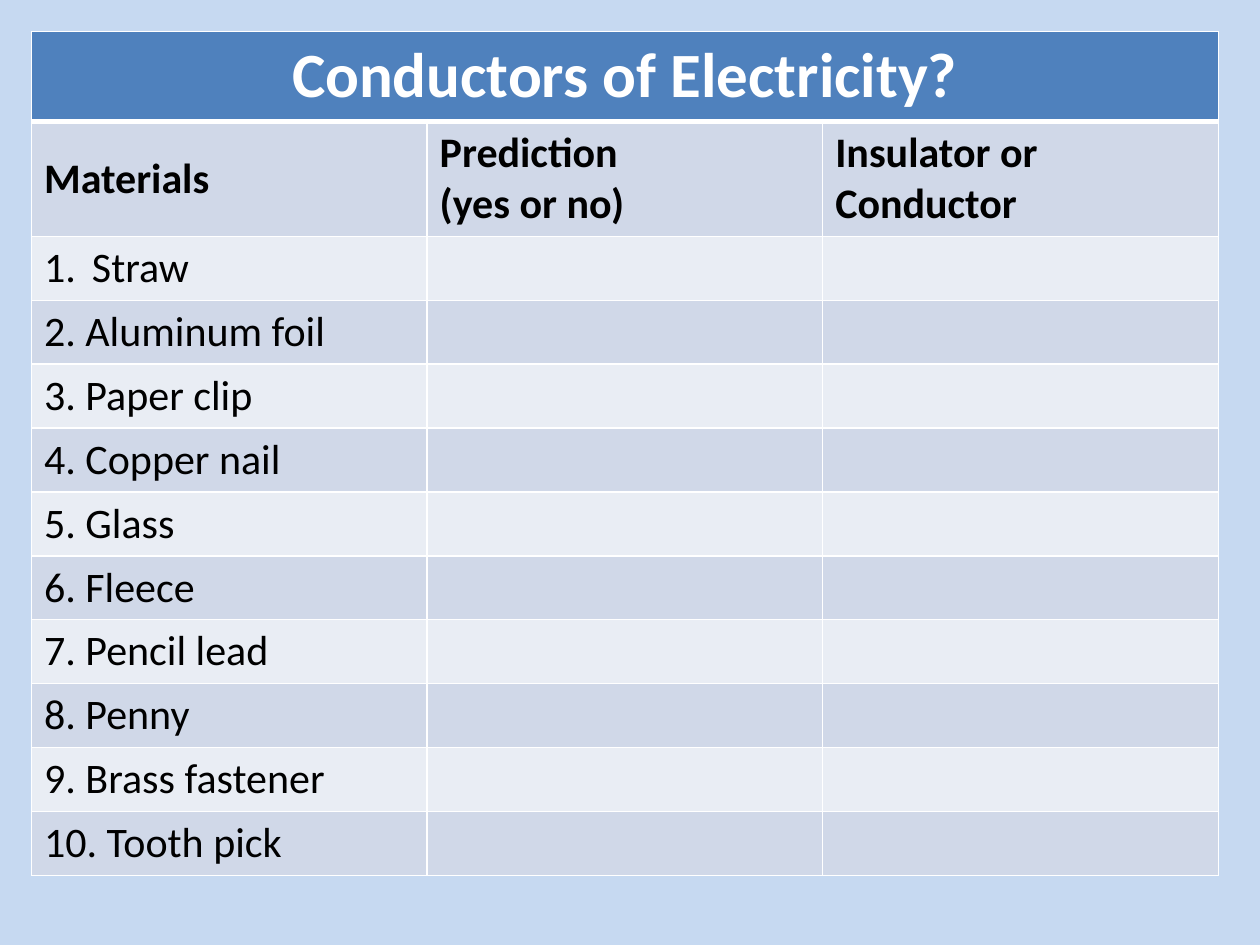
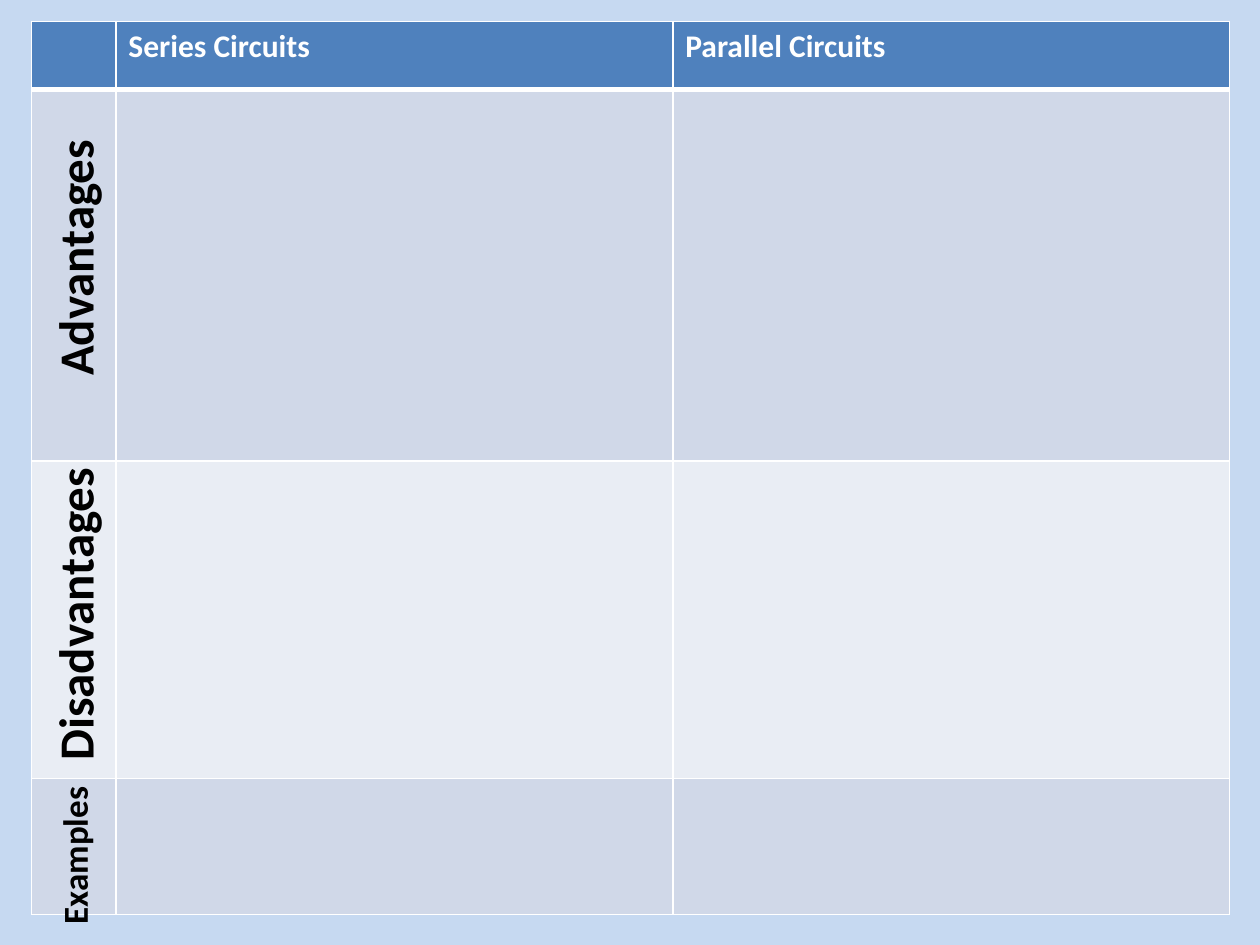
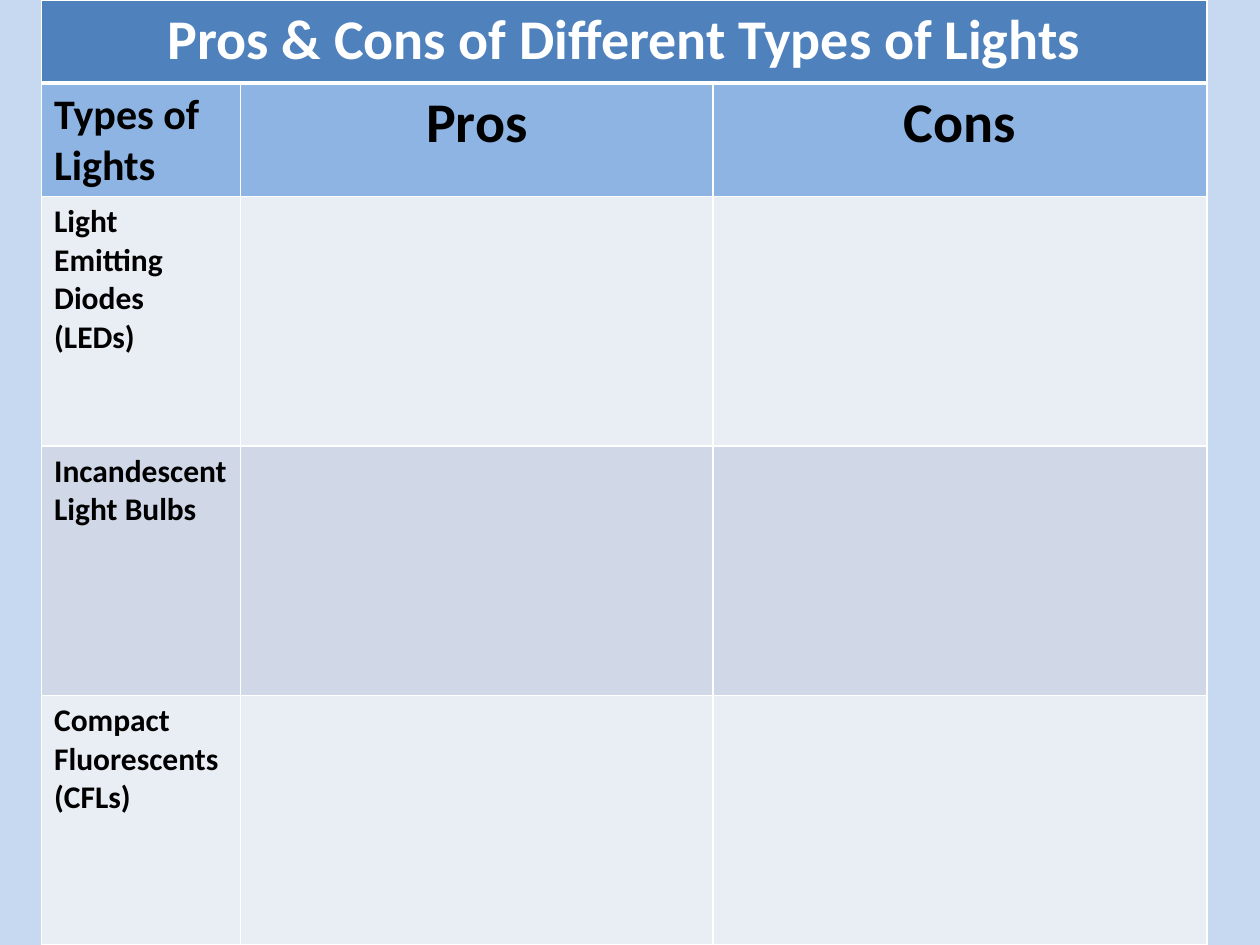
from lxml import etree
from pptx import Presentation
from pptx.dml.color import RGBColor
from pptx.enum.text import MSO_ANCHOR, MSO_AUTO_SIZE, PP_ALIGN
from pptx.oxml.ns import qn
from pptx.util import Inches, Pt

LEFT, CENTER = PP_ALIGN.LEFT, PP_ALIGN.CENTER
MIDDLE = MSO_ANCHOR.MIDDLE
GROW = MSO_AUTO_SIZE.SHAPE_TO_FIT_TEXT

SKY = RGBColor(0xC6, 0xD9, 0xF1)
BLUE = RGBColor(0x4F, 0x81, 0xBD)
LIGHT = RGBColor(0x8E, 0xB4, 0xE3)
DARK_BAND = RGBColor(0xD0, 0xD8, 0xE8)
PALE_BAND = RGBColor(0xE9, 0xED, 0xF4)
WHITE = RGBColor(0xFF, 0xFF, 0xFF)
BLACK = RGBColor(0, 0, 0)
FONT = "Calibri"


def write(frame, text, size, color=BLACK, bold=True, align=LEFT):
    for i, line in enumerate(text.split("\n")):
        para = frame.add_paragraph() if i else frame.paragraphs[0]
        para.alignment = align
        run = para.add_run()
        run.text = line
        run.font.name = FONT
        run.font.size = Pt(size)
        run.font.bold = bold
        run.font.color.rgb = color


def add_grid(slide, left, top, cols, rows):
    frame = slide.shapes.add_table(
        len(rows), len(cols), Inches(left), Inches(top),
        Inches(sum(cols)), Inches(sum(rows)))
    table = frame.table
    table.first_row = False
    table.horz_banding = False
    for col, width in zip(table.columns, cols):
        col.width = Inches(width)
    for r, height in enumerate(rows):
        table.rows[r].height = Inches(height)
        for cell in table.rows[r].cells:
            cell.fill.solid()
            band = DARK_BAND if r % 2 else PALE_BAND
            cell.fill.fore_color.rgb = band if r else BLUE
            props = cell._tc.get_or_add_tcPr()
            for i, side in enumerate(("lnL", "lnR", "lnT", "lnB")):
                thick = (r, side) in ((0, "lnB"), (1, "lnT"))
                line = etree.Element(qn("a:" + side), w=str(Pt(3 if thick else 1)))
                fill = etree.SubElement(line, qn("a:solidFill"))
                etree.SubElement(fill, qn("a:srgbClr"), val=str(WHITE))
                props.insert(i, line)
    return table


deck = Presentation()
deck.slide_width = Inches(10)
deck.slide_height = Inches(7.5)
slides = []
for _ in range(3):
    slide = deck.slides.add_slide(deck.slide_layouts[6])
    slide.background.fill.solid()
    slide.background.fill.fore_color.rgb = SKY
    slides.append(slide)
tests, pairs, lights = slides

table = add_grid(tests, 0.25, 0.25, [3.14] * 3, [0.5] * 12)
table.cell(0, 0).merge(table.cell(0, 2))
write(table.cell(0, 0).text_frame, "Conductors of Electricity?", 36, WHITE, align=CENTER)
heads = ["Materials", "Prediction\n(yes or no)", "Insulator or Conductor"]
for c, head in enumerate(heads):
    write(table.cell(1, c).text_frame, head, 24)
table.cell(1, 0).vertical_anchor = MIDDLE
items = ["Straw", "2. Aluminum foil", "3. Paper clip", "4. Copper nail", "5. Glass",
         "6. Fleece", "7. Pencil lead", "8. Penny", "9. Brass fastener", "10. Tooth pick"]
for r, item in enumerate(items, 2):
    write(table.cell(r, 0).text_frame, item, 24, bold=False)
props = table.cell(2, 0).text_frame.paragraphs[0]._p.get_or_add_pPr()
props.set("marL", str(Inches(0.38)))
props.set("indent", str(Inches(-0.38)))
etree.SubElement(props, qn("a:buFont"), typeface="+mj-lt")
etree.SubElement(props, qn("a:buAutoNum"), type="arabicPeriod")

table = add_grid(pairs, 0.25, 0.17, [0.67, 4.42, 4.42], [0.54, 2.95, 2.52, 1.08])
for c, head in enumerate(["Series Circuits", "Parallel Circuits"], 1):
    write(table.cell(0, c).text_frame, head, 18, WHITE)
labels = [("Advantages", 1.76, 0.57, 28), ("Disadvantages", 4.59, 0.57, 28),
          ("Examples", 6.57, 0.44, 20)]
for text, top, height, size in labels:
    box = pairs.shapes.add_textbox(Inches(-1.12), Inches(top), Inches(3.42), Inches(height))
    box.rotation = 270
    box.text_frame.word_wrap = True
    box.text_frame.auto_size = GROW
    write(box.text_frame, text, size, align=CENTER)

table = add_grid(lights, 0.33, 0, [1.58, 3.75, 3.92], [0.66, 0.89] + [1.98] * 3)
table.cell(0, 0).merge(table.cell(0, 2))
write(table.cell(0, 0).text_frame, "Pros & Cons of Different Types of Lights", 32, WHITE,
      align=CENTER)
heads = [("Types of Lights", 24, LEFT), ("Pros", 32, CENTER), ("Cons", 32, CENTER)]
for c, (head, size, align) in enumerate(heads):
    cell = table.cell(1, c)
    cell.fill.fore_color.rgb = LIGHT
    write(cell.text_frame, head, size, align=align)
kinds = ["Light Emitting Diodes (LEDs)", "Incandescent Light Bulbs",
         "Compact Fluorescents (CFLs)"]
for r, kind in enumerate(kinds, 2):
    write(table.cell(r, 0).text_frame, kind, 18)

deck.save("out.pptx")
